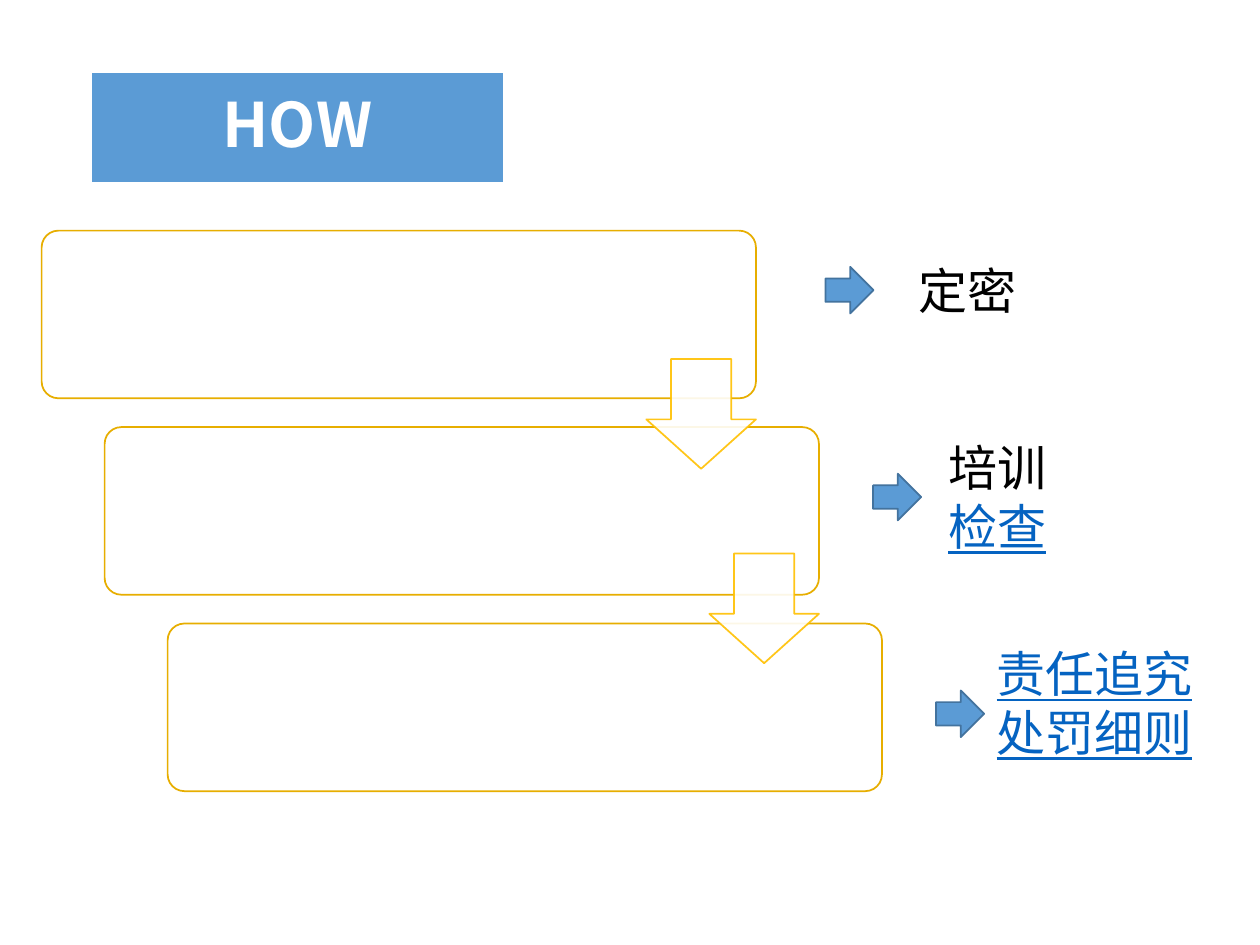
from dataclasses import dataclass

from lxml import etree
from pptx import Presentation
from pptx.dml.color import RGBColor
from pptx.enum import shapes, text
from pptx.oxml import ns
from pptx.util import Cm, Pt


@dataclass(frozen=True)
class Theme:
    white: str = "FFFFFF"
    black: str = "000000"
    blue: str = "5B9BD5"
    blue_edge: str = "43739E"
    link: str = "0563C1"
    gold: str = "E7AE00"
    amber: str = "FFC000"
    title_font: str = "Noto Sans CJK SC"
    body_font: str = "Calibri"
    title_size: int = 35
    body_size: int = 28


theme = Theme()
MSO = shapes.MSO_SHAPE

prs = Presentation()
prs.slide_width, prs.slide_height = Cm(25.4), Cm(19.05)
s = prs.slides.add_slide(prs.slide_layouts[6])


def add_shape(kind, left, top, width, height, fill, line, adjust=()):
    sp = s.shapes.add_shape(kind, Cm(left), Cm(top), Cm(width), Cm(height))
    sp.shadow.inherit = False
    sp.fill.solid()
    sp.fill.fore_color.rgb = RGBColor.from_string(fill)
    sp.line.color.rgb = RGBColor.from_string(line)
    sp.line.width = Pt(1)
    for i, value in enumerate(adjust):
        sp.adjustments[i] = value
    return sp


def style_run(r, font, size, color):
    r.font.name = font
    r.font.size = Pt(size)
    r.font.color.rgb = RGBColor.from_string(color)


# Staircase of three steps, with a down arrow between neighbours
step_x = 1.27
for i in range(3):
    add_shape(MSO.ROUNDED_RECTANGLE, 0.84 + i * step_x, 4.65 + i * 3.96,
              14.4, 3.38, theme.white, theme.gold, [0.1])

for i in range(2):
    sp = add_shape(MSO.DOWN_ARROW, 13.03 + i * step_x, 7.24 + i * 3.92,
                   2.21, 2.21, theme.white, theme.amber, [0.55, 0.45])
    for color in sp._element.spPr.iter(ns.qn("a:srgbClr")):
        etree.SubElement(color, ns.qn("a:alpha"), val="90000")

# Title block
sp = add_shape(MSO.RECTANGLE, 1.83, 1.45, 8.33, 2.24, theme.blue, theme.white)
tf = sp.text_frame
tf.margin_left = tf.margin_right = tf.margin_top = tf.margin_bottom = Cm(0.38)
tf.vertical_anchor = text.MSO_ANCHOR.MIDDLE
tf.text = "HOW"
p = tf.paragraphs[0]
p.alignment = text.PP_ALIGN.CENTER
p.line_spacing = 0.9
r = p.runs[0]
style_run(r, theme.title_font, theme.title_size, theme.white)
r.font.bold = True

# Right arrow and label for each step: arrow x, y, label x, y, height, lines
# Each line is its wording and whether it looks like a link
labels = [
    (16.64, 5.38, 18.26, 5.13, 1.45, [("定密", False)]),
    (17.6, 9.55, 18.87, 8.69, 2.64, [("培训", False), ("检查", True)]),
    (18.87, 13.92, 19.84, 12.85, 2.64, [("责任追究", True), ("处罚细则", True)]),
]
for arrow_x, arrow_y, x, y, height, lines in labels:
    add_shape(MSO.RIGHT_ARROW, arrow_x, arrow_y, 0.97, 0.94,
              theme.blue, theme.blue_edge)
    tf = s.shapes.add_textbox(Cm(x), Cm(y), Cm(5.89), Cm(height)).text_frame
    tf.word_wrap = True
    tf.auto_size = text.MSO_AUTO_SIZE.SHAPE_TO_FIT_TEXT
    tf.text = "\n".join(wording for wording, _ in lines)
    for p, (_, is_link) in zip(tf.paragraphs, lines):
        r = p.runs[0]
        style_run(r, theme.body_font, theme.body_size,
                  theme.link if is_link else theme.black)
        r.font.underline = is_link

prs.save("out.pptx")
